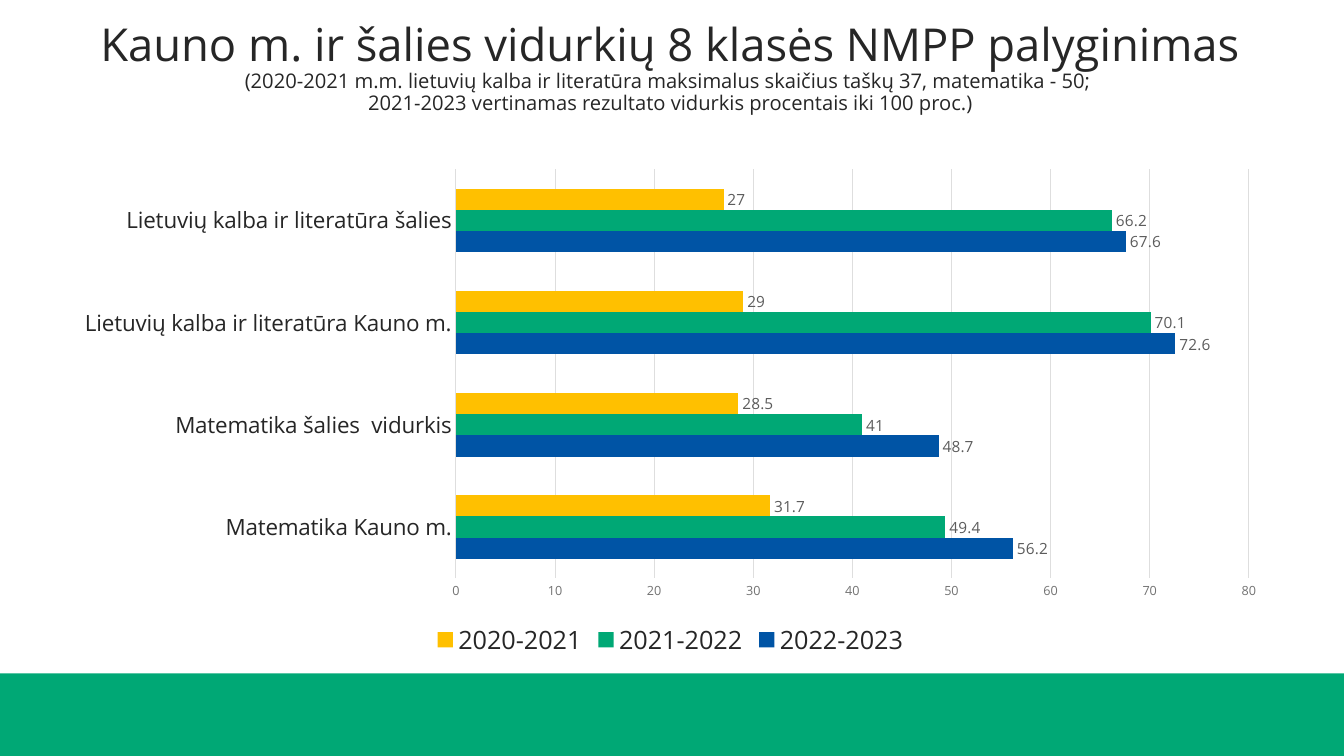
from dataclasses import dataclass

from pptx import Presentation
from pptx.chart.data import CategoryChartData
from pptx.dml.color import RGBColor
from pptx.enum.chart import XL_CHART_TYPE, XL_LABEL_POSITION, XL_LEGEND_POSITION, XL_TICK_MARK
from pptx.enum.shapes import MSO_SHAPE
from pptx.enum.text import MSO_ANCHOR, PP_ALIGN
from pptx.util import Inches, Pt

BARS = XL_CHART_TYPE.BAR_CLUSTERED
OUTSIDE = XL_LABEL_POSITION.OUTSIDE_END
BOTTOM = XL_LEGEND_POSITION.BOTTOM
NO_TICK = XL_TICK_MARK.NONE
RECTANGLE = MSO_SHAPE.RECTANGLE
ANCHOR_BOTTOM = MSO_ANCHOR.BOTTOM
CENTER = PP_ALIGN.CENTER
TITLE_ONLY = 5


@dataclass(frozen=True)
class Theme:
    font: str = "Open Sans"
    text: str = "262626"
    axis_text: str = "727272"
    label_text: str = "5C5C5C"
    grid: str = "DEDEDE"
    green: str = "00A875"
    blue: str = "0054A5"
    yellow: str = "FFC000"
    title_size: float = 32.4
    subtitle_size: float = 14.4
    chart_size: float = 10
    category_size: float = 16
    axis_size: float = 9
    label_size: float = 11
    legend_size: float = 18


THEME = Theme()

HEADING = "Kauno m. ir šalies vidurkių 8 klasės NMPP palyginimas"
SUBTITLE = (
    "(2020-2021 m.m. lietuvių kalba ir literatūra maksimalus skaičius taškų 37, matematika - 50; ",
    "2021-2023 vertinamas rezultato vidurkis procentais iki 100 proc.)",
)
# Categories and series run from the bottom of the chart upwards
CATEGORIES = (
    "Matematika Kauno m.",
    "Matematika šalies  vidurkis",
    "Lietuvių kalba ir literatūra Kauno m.",
    "Lietuvių kalba ir literatūra šalies",
)
SERIES = (
    ("2022-2023", (56.2, 48.7, 72.6, 67.6), THEME.blue),
    ("2021-2022", (49.4, 41, 70.1, 66.2), THEME.green),
    ("2020-2021", (31.7, 28.5, 29, 27), THEME.yellow),
)


def style_font(font, size, color):
    font.name = THEME.font
    font.size = Pt(size)
    font.color.rgb = RGBColor.from_string(color)


def style_line(line, color):
    line.color.rgb = RGBColor.from_string(color)
    line.width = Pt(0.75)


def add_footer_band(page):
    band = page.shapes.add_shape(RECTANGLE, 0, Inches(6.68), Inches(13.33), Inches(0.82))
    band.shadow.inherit = False
    band.fill.solid()
    band.fill.fore_color.rgb = RGBColor.from_string(THEME.green)
    band.line.fill.background()


def add_title(page):
    box = page.shapes.title
    box.left, box.top, box.width, box.height = map(Inches, (0.6, 0.3, 12.1, 0.89))
    frame = box.text_frame
    frame.word_wrap = True
    frame.vertical_anchor = ANCHOR_BOTTOM
    para = frame.paragraphs[0]
    para.alignment = CENTER
    para.line_spacing = 0.9
    span = para.add_run()
    span.text = HEADING
    style_font(span.font, THEME.title_size, THEME.text)
    for line in SUBTITLE:
        para.add_line_break()
        span = para.add_run()
        span.text = line
        style_font(span.font, THEME.subtitle_size, THEME.text)


def style_axes(chart):
    categories = chart.category_axis
    categories.major_tick_mark = categories.minor_tick_mark = NO_TICK
    categories.has_major_gridlines = False
    style_font(categories.tick_labels.font, THEME.category_size, THEME.text)
    style_line(categories.format.line, THEME.grid)

    values = chart.value_axis
    values.major_tick_mark = values.minor_tick_mark = NO_TICK
    values.minimum_scale, values.maximum_scale, values.major_unit = 0, 80, 10
    style_font(values.tick_labels.font, THEME.axis_size, THEME.axis_text)
    values.format.line.fill.background()
    style_line(values.major_gridlines.format.line, THEME.grid)


def style_series(series, color):
    series.format.fill.solid()
    series.format.fill.fore_color.rgb = RGBColor.from_string(color)
    labels = series.data_labels
    labels.show_value = True
    labels.position = OUTSIDE
    style_font(labels.font, THEME.label_size, THEME.label_text)


def add_results_chart(page):
    data = CategoryChartData()
    data.categories = CATEGORIES
    for name, values, _ in SERIES:
        data.add_series(name, values)
    area = map(Inches, (0.6, 1.58, 12.1, 4.99))
    chart = page.shapes.add_chart(BARS, *area, data).chart
    chart.has_title = False
    style_font(chart.font, THEME.chart_size, THEME.text)
    style_axes(chart)

    plot = chart.plots[0]
    plot.vary_by_categories = False
    plot.gap_width = 182
    plot.overlap = 0
    for series, (_, _, color) in zip(plot.series, SERIES):
        style_series(series, color)

    chart.has_legend = True
    chart.legend.position = BOTTOM
    chart.legend.include_in_layout = False
    style_font(chart.legend.font, THEME.legend_size, THEME.text)


def main():
    deck = Presentation()
    deck.slide_width, deck.slide_height = Inches(13.33), Inches(7.5)
    page = deck.slides.add_slide(deck.slide_layouts[TITLE_ONLY])
    add_footer_band(page)
    add_title(page)
    add_results_chart(page)
    deck.save("out.pptx")


if __name__ == "__main__":
    main()
